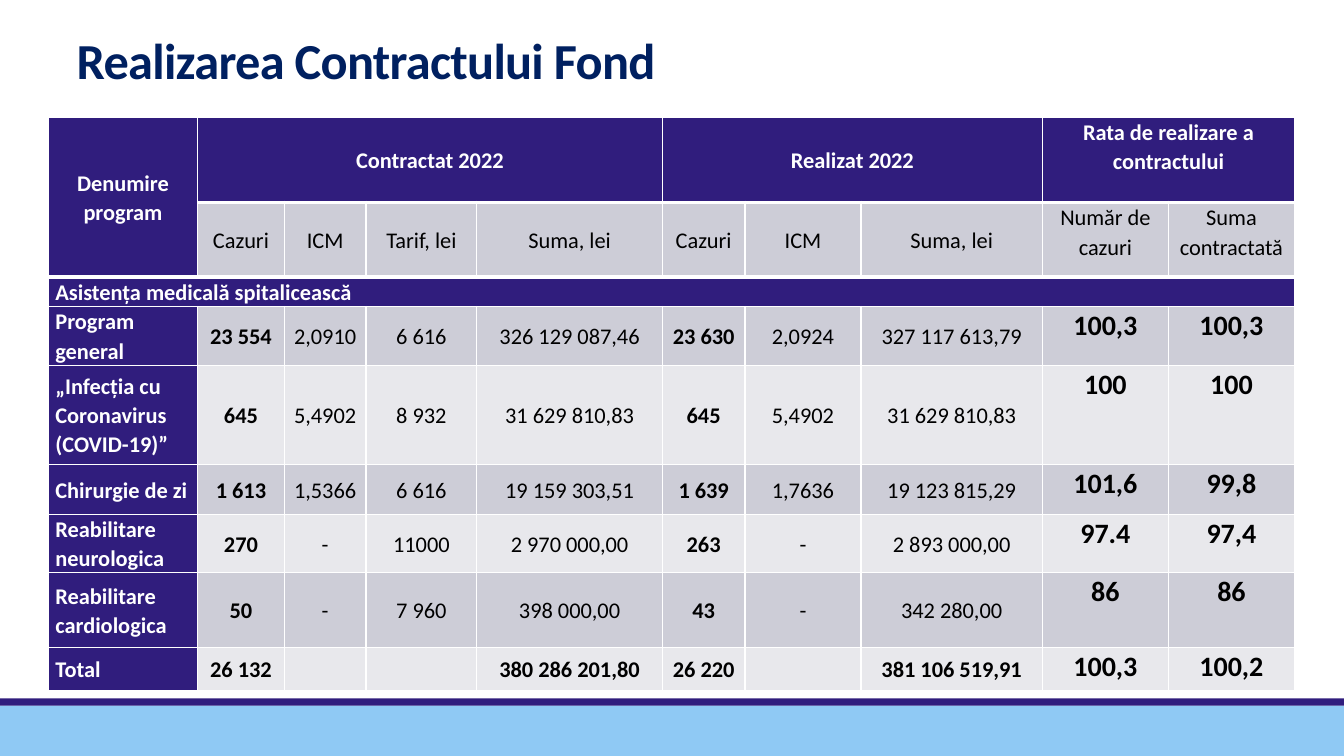
from lxml.etree import SubElement
from pptx import Presentation
from pptx.dml.color import RGBColor
from pptx.enum.shapes import MSO_SHAPE as Shape
from pptx.enum.text import MSO_ANCHOR as Anchor, PP_ALIGN as Align
from pptx.oxml.ns import qn
from pptx.util import Emu, Pt

PX = 9144  # 100 px to the inch
SLIDE_WIDTH, SLIDE_HEIGHT = 1333, 750
FONT = "Calibri"
COLORS = {
    "title": "002060", "purple": "301D7D", "sky": "8FC9F4", "white": "FFFFFF",
    "black": "000000", "band_dark": "CDCDD7", "band_light": "E8E8EC",
}

COLUMN_WIDTHS = [148, 86, 81, 110, 184, 82, 115, 180, 125, 125]
ROW_HEIGHTS = [85, 74, 24, 49, 99, 49, 49, 74, 43]
HEADER_ROWS = 2
SECTION_ROW = 2
TOTAL_ROW = len(ROW_HEIGHTS) - 1
CASE_COLUMNS = (1, 5)
RATE_COLUMNS = (8, 9)
MERGES = [((0, 0), (1, 0)), ((0, 1), (0, 4)), ((0, 5), (0, 7)),
          ((0, 8), (0, 9)), ((SECTION_ROW, 0), (SECTION_ROW, 9))]
ROWS = [
    ["Denumire program", "Contractat 2022", "", "", "", "Realizat 2022", "", "",
     "Rata de realizare a contractului", ""],
    ["", "Cazuri", "ICM", "Tarif, lei", "Suma, lei", "Cazuri", "ICM", "Suma, lei",
     "Număr de cazuri", "Suma contractată"],
    ["Asistența medicală spitalicească"] + [""] * 9,
    ["Program general", "23 554", "2,0910", "6 616", "326 129 087,46",
     "23 630", "2,0924", "327 117 613,79", "100,3", "100,3"],
    ["„Infecția cu Coronavirus (COVID-19)”", "645", "5,4902", "8 932", "31 629 810,83",
     "645", "5,4902", "31 629 810,83", "100", "100"],
    ["Chirurgie de zi", "1 613", "1,5366", "6 616", "19 159 303,51",
     "1 639", "1,7636", "19 123 815,29", "101,6", "99,8"],
    ["Reabilitare neurologica", "270", "-", "11000", "2 970 000,00",
     "263", "-", "2 893 000,00", "97.4", "97,4"],
    ["Reabilitare cardiologica", "50", "-", "7 960", "398 000,00",
     "43", "-", "342 280,00", "86", "86"],
    ["Total", "26 132", "", "", "380 286 201,80",
     "26 220", "", "381 106 519,91", "100,3", "100,2"],
]


def px(length):
    return Emu(length * PX)


def rgb(name):
    return RGBColor.from_string(COLORS[name])


def add_run(para, text, size, color, bold):
    run = para.add_run()
    run.text = text
    font = run.font
    font.name, font.size, font.bold = FONT, Pt(size), bold
    font.color.rgb = rgb(color)
    return run


def add_title(slide, box):
    title = slide.shapes.title
    title.left, title.top, title.width, title.height = map(px, box)
    frame = title.text_frame
    frame.word_wrap = True
    frame.vertical_anchor = Anchor.BOTTOM
    para = frame.paragraphs[0]
    para.alignment = Align.LEFT
    para.line_spacing = 0.85
    run = add_run(para, "Realizarea Contractului Fond", 36, "title", True)
    run.font._element.set("spc", "-50")


def add_footer_bands(slide, box):
    """Draw a thin purple strip above a sky-blue band that fills the box."""
    left, top, width, height = box
    strip = 7
    for color, y, band_height in (("sky", top + strip, height - strip),
                                  ("purple", top, strip)):
        band = slide.shapes.add_shape(Shape.RECTANGLE, px(left), px(y),
                                      px(width), px(band_height))
        band.shadow.inherit = False
        band.fill.solid()
        band.fill.fore_color.rgb = rgb(color)
        band.line.fill.background()


def set_borders(cell, row):
    """White hairlines, with thick rules below both header rows."""
    widths = {"L": 1, "R": 1,
              "T": 3 if 0 < row <= HEADER_ROWS else 1,
              "B": 3 if row < HEADER_ROWS else 1}
    properties = cell._tc.get_or_add_tcPr()
    for side, width in widths.items():
        line = SubElement(properties, qn(f"a:ln{side}"), w=str(Pt(width)))
        fill = SubElement(line, qn("a:solidFill"))
        SubElement(fill, qn("a:srgbClr"), val=COLORS["white"])


def format_cell(cell, row, column, text):
    is_body = row > SECTION_ROW
    is_rate = column in RATE_COLUMNS
    is_purple = row in (0, SECTION_ROW) or column == 0
    band = "band_dark" if row % 2 else "band_light"

    set_borders(cell, row)
    cell.fill.solid()
    cell.fill.fore_color.rgb = rgb("purple" if is_purple else band)
    cell.margin_left = cell.margin_right = px(7)
    cell.margin_top = cell.margin_bottom = 0
    cell.vertical_anchor = Anchor.TOP if is_rate else Anchor.MIDDLE
    if not text:
        return
    para = cell.text_frame.paragraphs[0]
    is_label = column == 0 and row >= SECTION_ROW
    para.alignment = Align.LEFT if is_label else Align.CENTER
    para.line_spacing = 1.07
    is_bold = (is_purple or row == TOTAL_ROW
               or (is_body and (is_rate or column in CASE_COLUMNS)))
    add_run(para, text, 20 if is_body and is_rate else 16,
            "white" if is_purple else "black", is_bold)


def add_contract_table(slide, left, top):
    frame = slide.shapes.add_table(len(ROW_HEIGHTS), len(COLUMN_WIDTHS), px(left), px(top),
                                   px(sum(COLUMN_WIDTHS)), px(sum(ROW_HEIGHTS)))
    table = frame.table
    table.horz_banding = False
    table.first_row = False
    for column, width in zip(table.columns, COLUMN_WIDTHS):
        column.width = px(width)
    for row, height in zip(table.rows, ROW_HEIGHTS):
        row.height = px(height)
    for first, last in MERGES:
        table.cell(*first).merge(table.cell(*last))
    for row, texts in enumerate(ROWS):
        for column, text in enumerate(texts):
            format_cell(table.cell(row, column), row, column, text)


def main():
    deck = Presentation()
    deck.slide_width, deck.slide_height = px(SLIDE_WIDTH), px(SLIDE_HEIGHT)
    slide = deck.slides.add_slide(deck.slide_layouts.get_by_name("Title Only"))
    add_footer_bands(slide, (0, 693, SLIDE_WIDTH, 57))
    add_title(slide, (66, 18, 1200, 76))
    add_contract_table(slide, 48, 116)
    deck.save("out.pptx")


if __name__ == "__main__":
    main()
